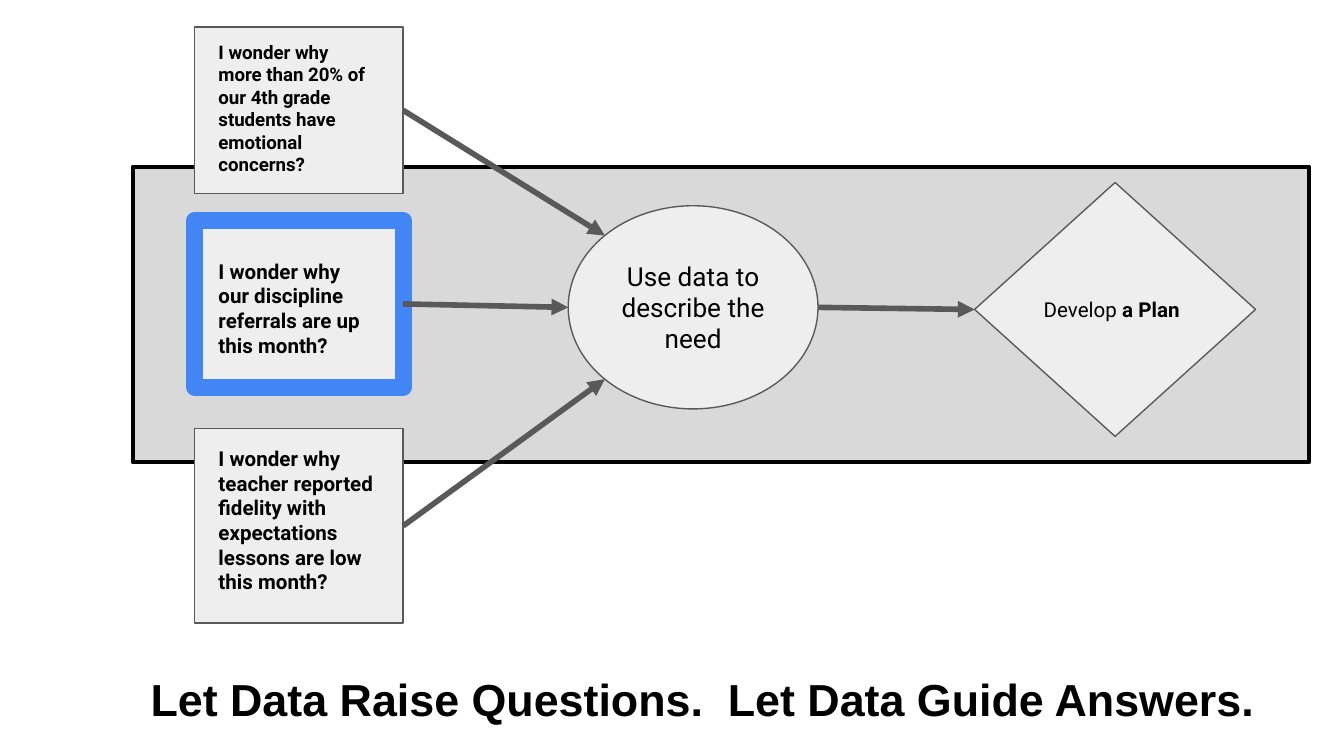
from math import sqrt

from lxml.etree import SubElement
from pptx import Presentation
from pptx.dml.color import RGBColor
from pptx.enum.shapes import MSO_CONNECTOR, MSO_SHAPE
from pptx.enum.text import MSO_ANCHOR, PP_ALIGN
from pptx.oxml.ns import qn
from pptx.util import Cm, Pt

BLACK, GRAY, LIGHT, PANEL, BLUE = "000000", "595959", "EEEEEE", "D9D9D9", "4285F4"

QUESTIONS = [
    (0.51, 3.15, GRAY, 0.75, 1.04, 2.01, 10,
     "I wonder why  more than 20% of our 4th grade students have emotional concerns?"),
    (4.17, 3.15, BLUE, 9, 4.67, 2.31, 11,
     "I wonder why  our discipline referrals are up this month?"),
    (8.1, 3.68, GRAY, 0.75, 8.66, 2.34, 11,
     "I wonder why teacher reported fidelity with expectations lessons are low this month?"),
]


def color(value):
    return RGBColor.from_string(value)


def add_box(s, kind, left, top, width, height, fill=LIGHT, line=GRAY, weight=0.75):
    sp = s.shapes.add_shape(kind, Cm(left), Cm(top), Cm(width), Cm(height))
    sp.shadow.inherit = False
    sp.fill.solid()
    sp.fill.fore_color.rgb = color(fill)
    sp.line.color.rgb = color(line)
    sp.line.width = Pt(weight)
    return sp


def add_text(s, left, top, width, height, runs, size, font="Roboto",
             align=PP_ALIGN.CENTER, anchor=MSO_ANCHOR.MIDDLE, inset=0.18):
    tf = s.shapes.add_textbox(Cm(left), Cm(top), Cm(width), Cm(height)).text_frame
    tf.word_wrap = True
    tf.vertical_anchor = anchor
    tf.margin_left = tf.margin_right = tf.margin_top = tf.margin_bottom = Cm(inset)
    p = tf.paragraphs[0]
    p.alignment = align
    for text, bold in runs:
        r = p.add_run()
        r.text = text
        r.font.name = font
        r.font.size = Pt(size)
        r.font.bold = bold
        r.font.color.rgb = color(BLACK)


def add_arrow(s, start, end, source=None, target=None):
    cx = s.shapes.add_connector(MSO_CONNECTOR.STRAIGHT, *map(Cm, start + end))
    cx.line.color.rgb = color(GRAY)
    cx.line.width = Pt(3)
    SubElement(cx.line._get_or_add_ln(), qn("a:tailEnd"), type="triangle")
    SubElement(cx._element.spPr, qn("a:effectLst"))
    if source is not None:
        cx.begin_connect(source, 3)
    if target is not None:
        cx.end_connect(target, 1)


def add_questions(s, ends):
    left, width = 3.68, 3.94
    for question, end in zip(QUESTIONS, ends):
        top, height, line, weight, text_top, text_height, size, text = question
        box = add_box(s, MSO_SHAPE.RECTANGLE, left, top, width, height, LIGHT, line, weight)
        add_text(s, 3.95, text_top, 3.4, text_height, [(text, True)], size,
                 align=PP_ALIGN.LEFT)
        add_arrow(s, (left + width, top + height / 2), end, source=box)


def main():
    prs = Presentation()
    prs.slide_width, prs.slide_height = Cm(25.4), Cm(14.29)
    s = prs.slides.add_slide(prs.slide_layouts[6])

    add_box(s, MSO_SHAPE.RECTANGLE, 2.51, 3.15, 22.23, 5.59, PANEL, BLACK, 2.25)

    left, top, width, height = 10.74, 3.89, 4.72, 3.84
    add_box(s, MSO_SHAPE.OVAL, left, top, width, height)
    add_text(s, 11.13, 4.8, 3.94, 2.01, [("Use data to describe the need", False)], 14)
    plan = add_box(s, MSO_SHAPE.DIAMOND, 18.42, 3.45, 5.31, 4.8)
    add_text(s, 19.46, 4.85, 3.1, 2.01, [("Develop ", False), ("a Plan", True)], 11)

    middle = top + height / 2
    dx, dy = width / 2 / sqrt(2), height / 2 / sqrt(2)
    corner = left + width / 2 - dx
    add_questions(s, [(corner, middle - dy), (left, middle), (corner, middle + dy)])
    add_arrow(s, (left + width, middle), (18.42, 5.85), target=plan)

    add_text(s, 2.57, 12.45, 21.41, 1.55,
             [("Let Data Raise Questions.  Let Data Guide Answers.", True)], 24,
             font="Arial", anchor=MSO_ANCHOR.TOP, inset=0.25)
    prs.save("out.pptx")


if __name__ == "__main__":
    main()
